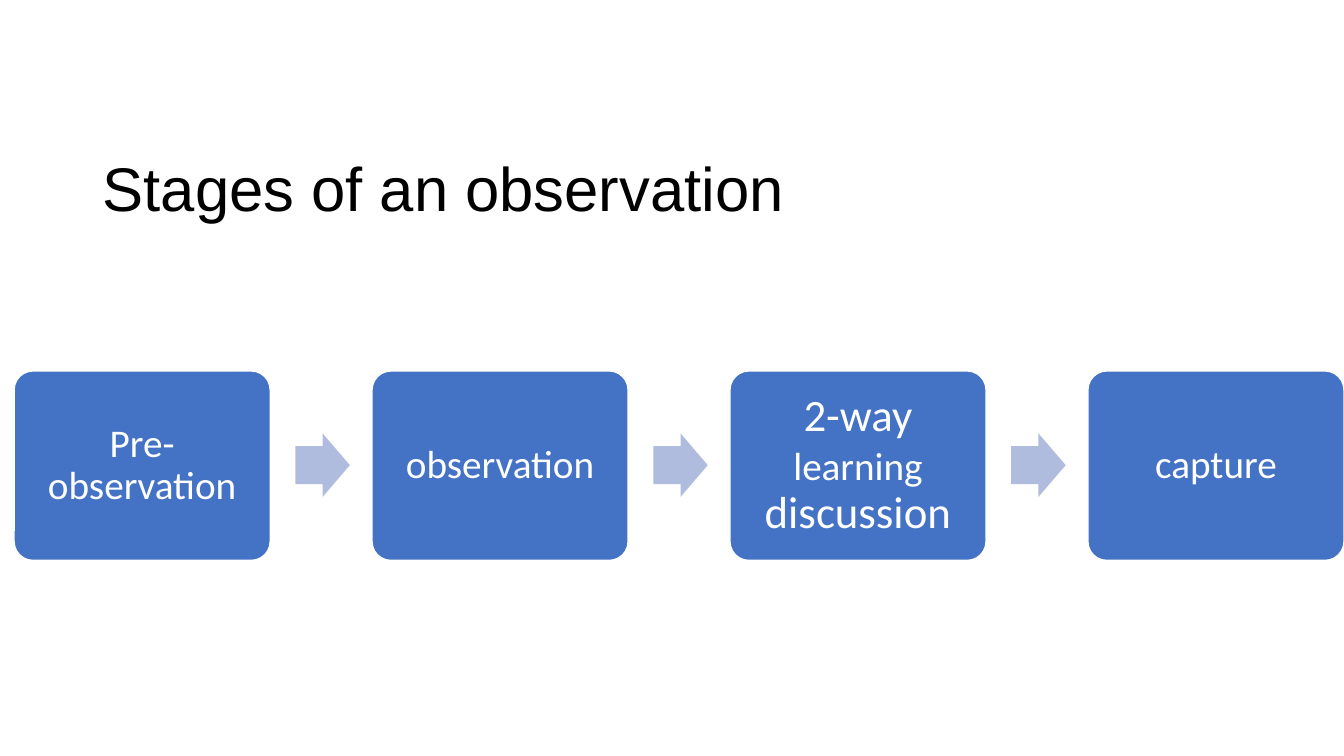
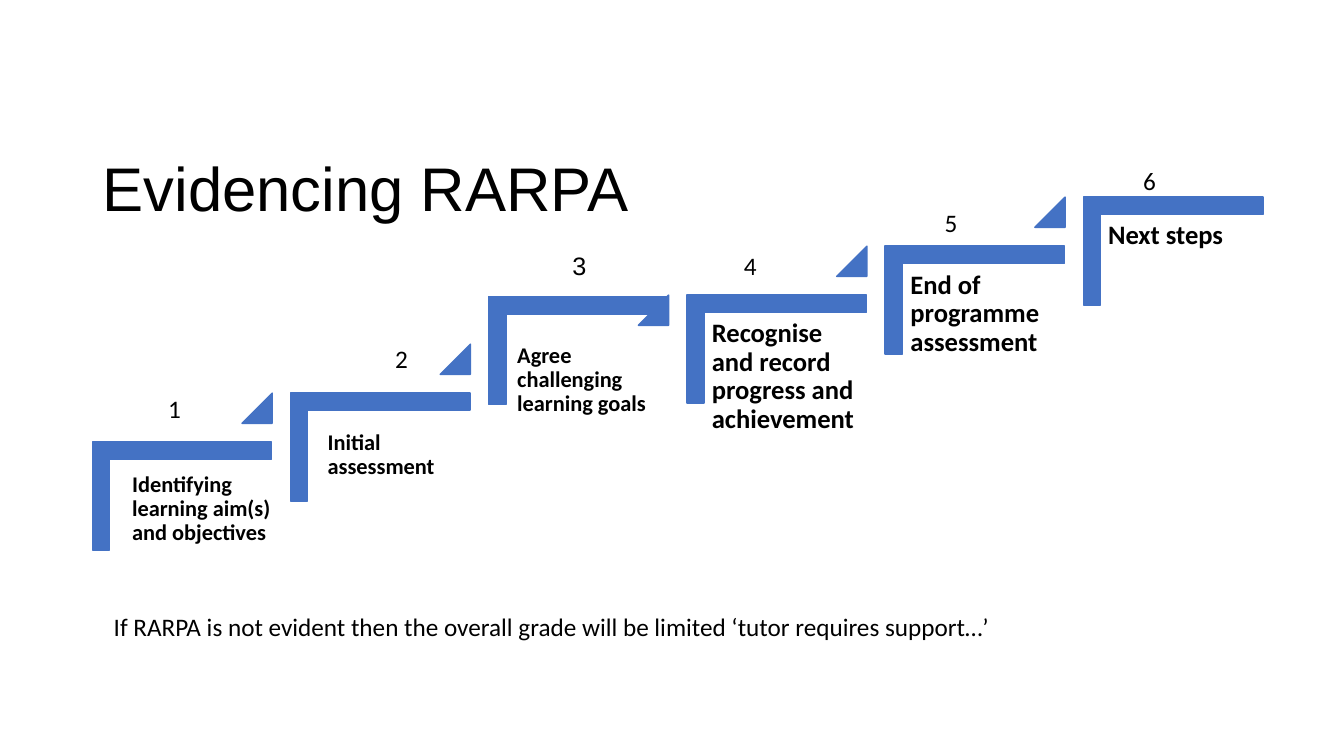
from pptx import Presentation
from pptx.dml.color import RGBColor
from pptx.enum.shapes import MSO_SHAPE
from pptx.enum.text import MSO_ANCHOR, PP_ALIGN
from pptx.util import Inches, Pt

ROUNDED = MSO_SHAPE.ROUNDED_RECTANGLE
ARROW = MSO_SHAPE.RIGHT_ARROW
CORNER = MSO_SHAPE.CORNER
TRIANGLE = MSO_SHAPE.ISOSCELES_TRIANGLE
TOP, MIDDLE = MSO_ANCHOR.TOP, MSO_ANCHOR.MIDDLE
LEFT, CENTER = PP_ALIGN.LEFT, PP_ALIGN.CENTER

COLORS = {"blue": "4472C4", "pale": "B0BCDE", "white": "FFFFFF", "black": "000000"}
HEADING_FONT, BODY_FONT = "Arial", "Calibri"

STAGE_PITCH = 3.55
STAGES = [
    [("Pre-observation", 28)],
    [("observation", 28)],
    [("2-way ", 32), ("learning", 28), (" discussion", 32)],
    [("capture", 28)],
]

STEP_LEFT, STEP_RIGHT = 1.27, 11.1
STEP_BOTTOM, STEP_TOP = 4.03, 1.6
STEPS = [
    ("Identifying learning aim(s) and objectives", 16, 1.24, 4.62),
    ("Initial assessment", 16, 3.18, 4.21),
    ("Agree challenging learning goals", 16, 5.06, 3.34),
    ("Recognise and record progress and achievement", 19, 6.99, 3.1),
    ("End of programme assessment", 19, 8.96, 2.62),
    ("Next steps", 19, 10.92, 2.13),
]
STEP_PITCH = (STEP_RIGHT - STEP_LEFT) / (len(STEPS) - 1)
STEP_RISE = (STEP_BOTTOM - STEP_TOP) / (len(STEPS) - 1)
RAISED_CORNERS = {2: 2.59}
NUMBER_PLACES = [(1.57, 3.85), (3.82, 3.36), (5.58, 2.43),
                 (7.28, 2.43), (9.27, 2.01), (11.24, 1.59)]


class Deck:
    def __init__(self):
        self.prs = Presentation()
        self.prs.slide_width, self.prs.slide_height = Inches(13.33), Inches(7.5)
        self.slide = None

    def color(self, name):
        return RGBColor.from_string(COLORS[name])

    def new_slide(self, heading):
        self.slide = self.prs.slides.add_slide(self.prs.slide_layouts[6])
        self.text(heading, 0.92, 1.18, 11.5, 1.45, 44, font=HEADING_FONT,
                  anchor=MIDDLE, spacing=0.9)

    def shape(self, kind, left, top, width, height, fill, line=None,
              adjustments=(), rotation=0):
        shape = self.slide.shapes.add_shape(
            kind, Inches(left), Inches(top), Inches(width), Inches(height))
        shape.shadow.inherit = False
        shape.rotation = rotation
        for index, value in enumerate(adjustments):
            shape.adjustments[index] = value
        shape.fill.solid()
        shape.fill.fore_color.rgb = self.color(fill)
        if line:
            shape.line.color.rgb = self.color(line)
            shape.line.width = Pt(1)
        else:
            shape.line.fill.background()
        return shape

    def frame(self, shape, anchor, inset=None):
        frame = shape.text_frame
        frame.word_wrap = True
        frame.vertical_anchor = anchor
        if inset is not None:
            frame.margin_left = frame.margin_right = Inches(inset)
            frame.margin_top = frame.margin_bottom = Inches(inset)
        return frame.paragraphs[0]

    def style(self, paragraph, font, color, align=LEFT, spacing=1.0, bold=False):
        paragraph.alignment = align
        paragraph.line_spacing = spacing
        paragraph.font.name = font
        paragraph.font.bold = bold
        paragraph.font.color.rgb = self.color(color)

    def text(self, words, left, top, width, height, size, font=BODY_FONT,
             anchor=TOP, inset=None, spacing=1.0, bold=False):
        box = self.slide.shapes.add_textbox(
            Inches(left), Inches(top), Inches(width), Inches(height))
        paragraph = self.frame(box, anchor, inset)
        paragraph.text = words
        self.style(paragraph, font, "black", spacing=spacing, bold=bold)
        paragraph.font.size = Pt(size)

    def stage(self, phrases, left):
        card = self.shape(ROUNDED, left, 3.68, 2.54, 1.88, "blue", "white", [0.1])
        paragraph = self.frame(card, MIDDLE, 0.12)
        self.style(paragraph, BODY_FONT, "white", CENTER, 0.9)
        for words, size in phrases:
            run = paragraph.add_run()
            run.text = words
            run.font.size = Pt(size)

    def arrow(self, left):
        self.shape(ARROW, left, 4.3, 0.54, 0.63, "pale", adjustments=[0.6, 0.5])

    def corner(self, left, top):
        self.shape(CORNER, left, top, 1.07, 1.78, "blue", "blue",
                   [0.16, 0.16], 90)

    def triangle(self, left, top):
        self.shape(TRIANGLE, left, top, 0.3, 0.3, "blue", "blue", [1])


def build_stages(deck):
    deck.new_slide("Stages of an observation")
    for index, phrases in enumerate(STAGES):
        offset = index * STAGE_PITCH
        deck.stage(phrases, 0.14 + offset)
        if index < len(STAGES) - 1:
            deck.arrow(2.93 + offset)


def build_steps(deck):
    deck.new_slide("Evidencing RARPA")
    for index, (words, size, left, top) in enumerate(STEPS):
        across, rise = index * STEP_PITCH, index * STEP_RISE
        deck.corner(STEP_LEFT + across,
                    RAISED_CORNERS.get(index, STEP_BOTTOM - rise))
        deck.text(words, left, top, 1.61, 1.41, size, inset=0.07,
                  spacing=0.9, bold=True)
        if index < len(STEPS) - 1:
            deck.triangle(2.4 + across, 3.9 - rise)
    for number, (left, top) in enumerate(NUMBER_PLACES, 1):
        font = HEADING_FONT if number == 3 else BODY_FONT
        deck.text(str(number), left, top, 0.47, 0.4, 18, font=font)
    deck.text("If RARPA is not evident then the overall grade will be limited "
              "‘tutor requires support…’", 1.03, 6.02, 11.5, 0.4, 18)


def main():
    deck = Deck()
    build_stages(deck)
    build_steps(deck)
    deck.prs.save("out.pptx")


if __name__ == "__main__":
    main()
